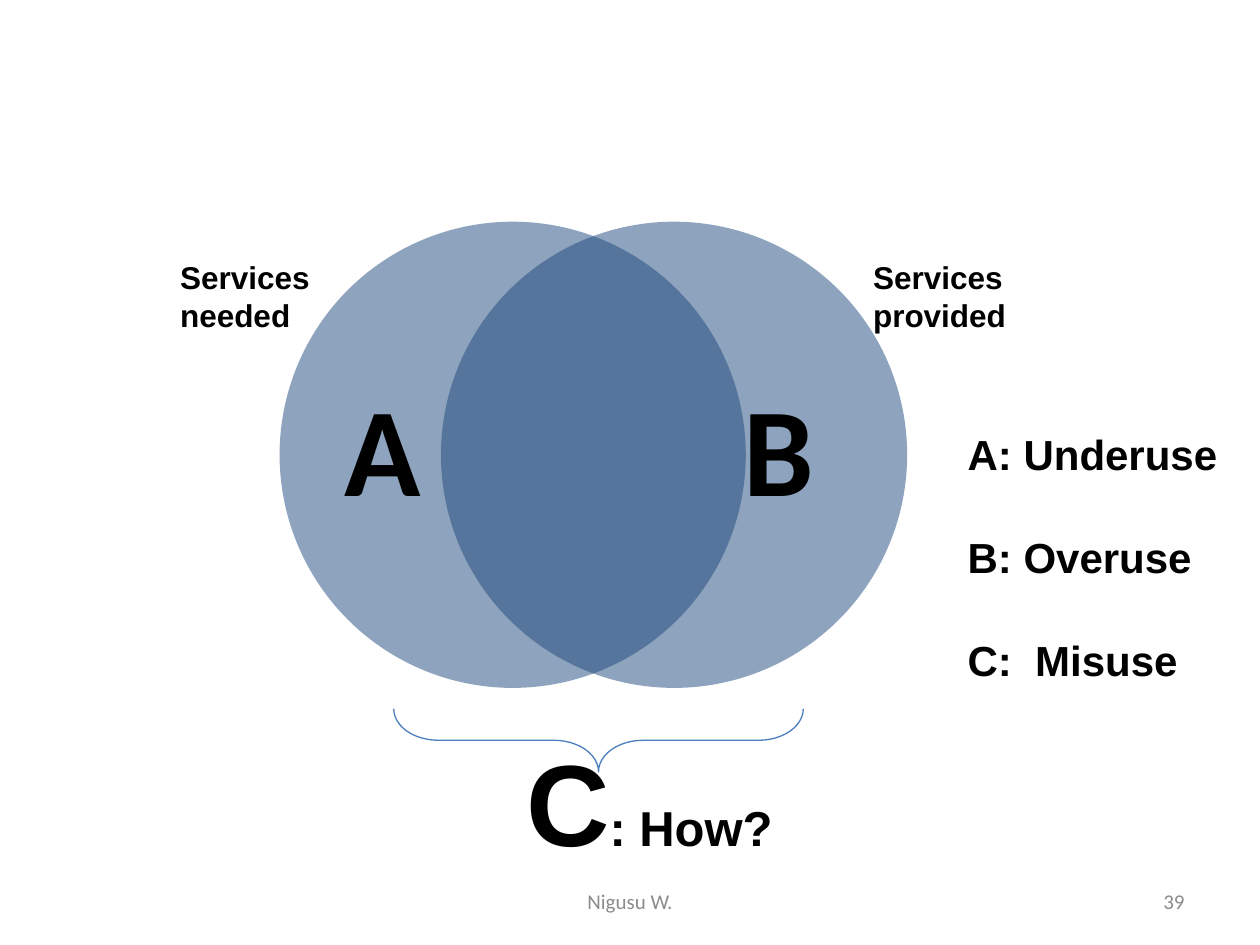
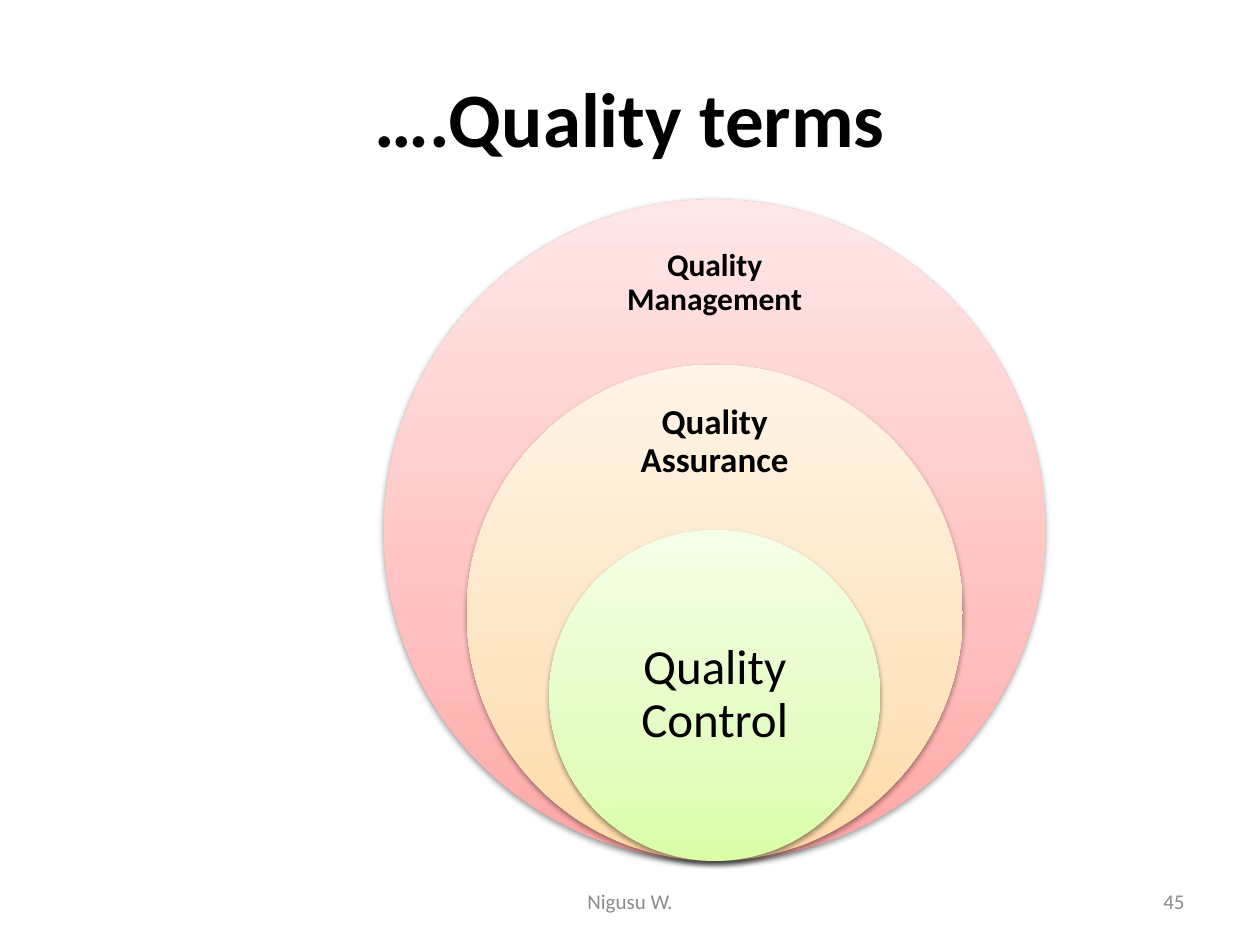
"""Build two slides on quality of care: a use diagram and nested quality terms."""
from pptx import Presentation
from pptx.dml.color import RGBColor
from pptx.enum.shapes import MSO_SHAPE
from pptx.enum.text import MSO_ANCHOR, PP_ALIGN
from pptx.oxml import parse_xml
from pptx.oxml.ns import nsdecls, qn
from pptx.util import Pt

COLORS = {"text": "000000", "footer": "8C8C8C", "venn": "1F497D", "brace": "4B7EBC"}
AUTHOR = "Nigusu W."

VENN_TOP, VENN_DIAMETER = 126.7, 266.4
VENN = [
    ("A", 159.8, (196.6, 158.4, 153.4, 203.8), PP_ALIGN.LEFT, 0),
    ("B", 252, (327.6, 158.4, 153.4, 203.8), PP_ALIGN.CENTER, 81),
]
SERVICES = [
    ("Services needed", (95.8, 144, 90, 51)),
    ("Services provided", (491.8, 144, 102.2, 51)),
]
USE_LEGEND = ["A: Underuse", "B: Overuse", "C:  Misuse"]
HOW = [("C", 66), (": How?", 28)]

TERMS_TITLE = "….Quality terms"
TERMS_CENTER, TERMS_BOTTOM, TERMS_DIAMETER = 408.4, 492, 378
TERMS = [
    ("Quality Management", 1, ("FFA6A5", "FFC0BF", "FFE7E7"), 18, True, (133.2, 131.8, 56.9), 10),
    ("Quality Assurance", 0.75, ("FFDAA5", "FEE4C0", "FFF4E7"), 20, True, (226.1, 131.8, 53.3), 11.5),
    ("Quality Control", 0.5, ("DAFDA7", "E4FCC2", "F5FFE7"), 28, False, (349.9, 133.9, 94.3), 15.8),
]
GRADIENT_STOPS = (0, 35, 100)


def style(font, size, name, bold, color):
    font.name, font.bold = name, bold
    font.color.rgb = RGBColor.from_string(COLORS[color])
    if size:
        font.size = Pt(size)


def add_text(slide, box, lines, size=None, name="Calibri", bold=True, color="text",
             align=PP_ALIGN.LEFT, anchor=MSO_ANCHOR.TOP, insets=(7.2, 3.6, 7.2, 3.6),
             line_spacing=None, gap=0):
    frame = slide.shapes.add_textbox(*map(Pt, box)).text_frame
    frame.word_wrap = True
    frame.vertical_anchor = anchor
    (frame.margin_left, frame.margin_top,
     frame.margin_right, frame.margin_bottom) = map(Pt, insets)
    for index, line in enumerate(lines):
        paragraph = frame.add_paragraph() if index else frame.paragraphs[0]
        paragraph.alignment = align
        paragraph.line_spacing = line_spacing
        paragraph.space_before = Pt(gap if index else 0)
        style(paragraph.font, size, name, bold, color)
        for words, run_size in [(line, None)] if isinstance(line, str) else line:
            run = paragraph.add_run()
            run.text = words
            if run_size:
                run.font.size = Pt(run_size)


def add_circle(slide, left, top, diameter):
    circle = slide.shapes.add_shape(MSO_SHAPE.OVAL, *map(Pt, (left, top, diameter, diameter)))
    circle.shadow.inherit = False
    circle.line.fill.background()
    return circle


def shade(circle, colors):
    stops = "".join(
        f'<a:gs pos="{position * 1000}"><a:srgbClr val="{color}"/></a:gs>'
        for position, color in zip(GRADIENT_STOPS, colors))
    properties = circle._element.spPr
    properties.find(qn("a:prstGeom")).addnext(parse_xml(
        f'<a:gradFill {nsdecls("a")} rotWithShape="1"><a:gsLst>{stops}</a:gsLst>'
        '<a:lin ang="16200000" scaled="0"/></a:gradFill>'))
    properties.find(qn("a:effectLst")).append(parse_xml(
        f'<a:outerShdw {nsdecls("a")} blurRad="{Pt(3.1)}" dist="{Pt(1.6)}" dir="5400000" '
        'rotWithShape="0"><a:srgbClr val="000000"><a:alpha val="38000"/></a:srgbClr></a:outerShdw>'))


def add_footer(slide, number):
    for words, box, align in ((AUTHOR, (246, 500.5, 228, 28.8), PP_ALIGN.CENTER),
                              (str(number), (516, 500.5, 168, 28.8), PP_ALIGN.RIGHT)):
        add_text(slide, box, [words], 12, bold=False, color="footer",
                 align=align, anchor=MSO_ANCHOR.MIDDLE)


def build_use_slide(slide):
    add_text(slide, (203, 414, 336.2, 87.1), [HOW], name="Arial", align=PP_ALIGN.CENTER)
    for letter, left, box, align, indent in VENN:
        circle = add_circle(slide, left, VENN_TOP, VENN_DIAMETER)
        circle.fill.solid()
        circle.fill.fore_color.rgb = RGBColor.from_string(COLORS["venn"])
        circle._element.spPr.find(".//" + qn("a:srgbClr")).append(
            parse_xml(f'<a:alpha {nsdecls("a")} val="50000"/>'))
        add_text(slide, box, [letter], 72, align=align, anchor=MSO_ANCHOR.MIDDLE,
                 insets=(indent, 0, 0, 0), line_spacing=0.9)
    for words, box in SERVICES:
        add_text(slide, box, [words], 18, "Arial")
    add_text(slide, (545.8, 241.2, 174.2, 181.4), USE_LEGEND, 24, "Arial", gap=30)
    brace = slide.shapes.add_shape(MSO_SHAPE.LEFT_BRACE, *map(Pt, (324, 306, 36, 234)))
    brace.rotation = 270
    brace.adjustments[0], brace.adjustments[1] = 0.71, 0.5
    brace.shadow.inherit = False
    brace.fill.background()
    brace.line.color.rgb = RGBColor.from_string(COLORS["brace"])
    brace.line.width = Pt(0.75)


def build_terms_slide(slide):
    add_text(slide, (36, 21.6, 648, 90), [TERMS_TITLE], 44,
             align=PP_ALIGN.CENTER, anchor=MSO_ANCHOR.MIDDLE)
    for term, scale, colors, size, bold, (top, width, height), inset in TERMS:
        diameter = TERMS_DIAMETER * scale
        shade(add_circle(slide, TERMS_CENTER - diameter / 2, TERMS_BOTTOM - diameter, diameter), colors)
        add_text(slide, (TERMS_CENTER - width / 2, top, width, height), [term], size, bold=bold,
                 align=PP_ALIGN.CENTER, anchor=MSO_ANCHOR.MIDDLE,
                 insets=(inset,) * 4, line_spacing=0.9)


def main():
    deck = Presentation()
    deck.slide_width, deck.slide_height = Pt(720), Pt(540)
    for build, number in ((build_use_slide, 39), (build_terms_slide, 45)):
        slide = deck.slides.add_slide(deck.slide_layouts[6])
        build(slide)
        add_footer(slide, number)
    deck.save("out.pptx")


if __name__ == "__main__":
    main()
